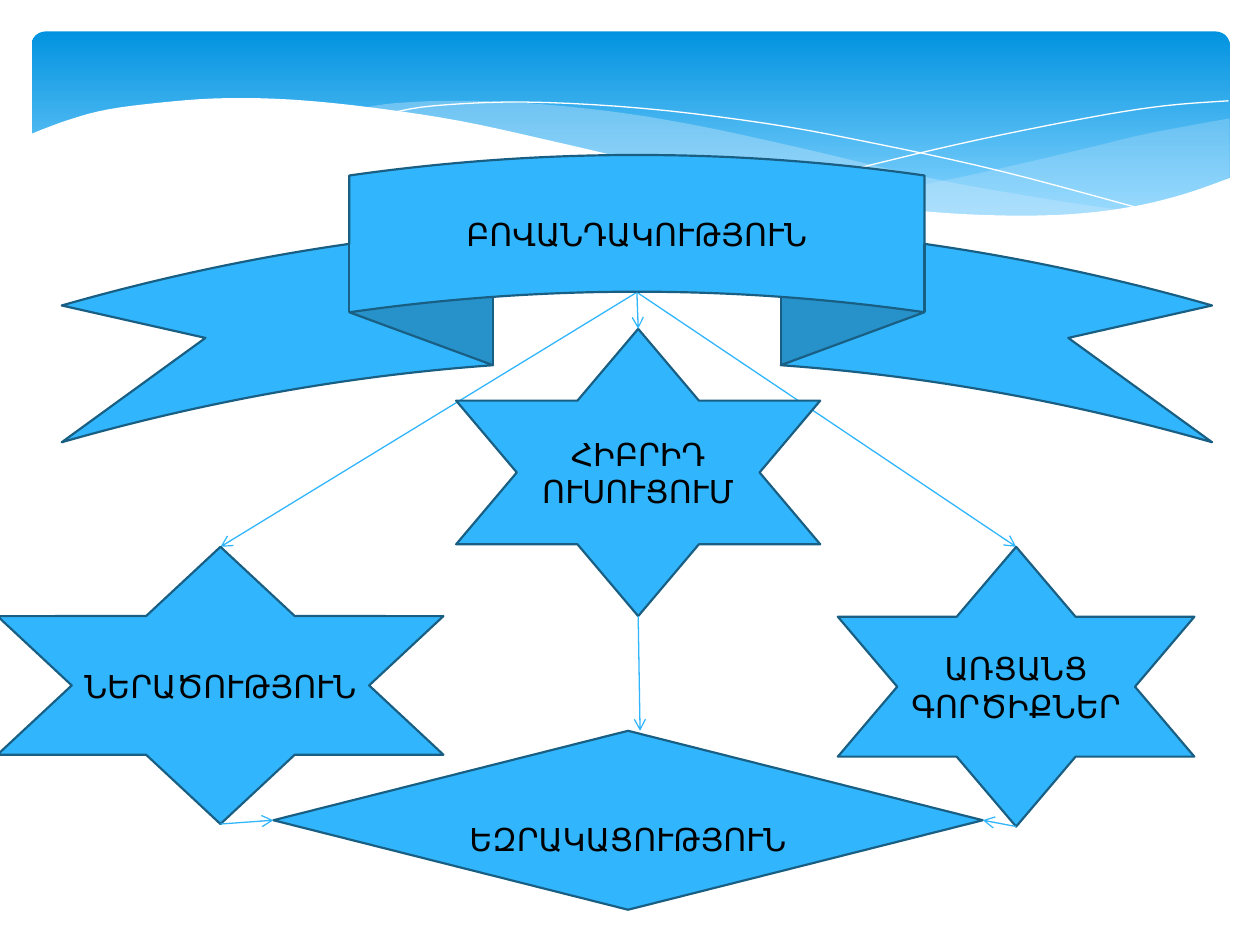
import pptx
import pptx.util
import pptx.dml.color
import pptx.enum.shapes
import pptx.enum.text
import pptx.oxml
import pptx.oxml.ns

Inches, Pt = pptx.util.Inches, pptx.util.Pt
SHAPE = pptx.enum.shapes.MSO_SHAPE
WIDTH, HEIGHT = 10, 7.5
BLUE, OUTLINE, PALE, WHITE, BLACK = "31B6FD", "195F84", "C6E7FC", "FFFFFF", "000000"

# Content: name -> preset, (left, top, width, height), adjustments, top inset, lines
PARTS = {
    "intro": (SHAPE.STAR_6_POINT, (-0.02, 4.34, 3.54, 2.2), (), 0.05, ["ՆԵՐԱԾՈՒԹՅՈՒՆ"]),
    "contents": (SHAPE.CURVED_UP_RIBBON, (0.49, 1.23, 9.13, 2.28), (0.524, 0.5, 0.125), 0.05,
                 ["ԲՈՎԱՆԴԱԿՈՒԹՅՈՒՆ"]),
    "tools": (SHAPE.STAR_6_POINT, (6.65, 4.34, 2.83, 2.22), (), 0.05, ["ԱՌՑԱՆՑ ԳՈՐԾԻՔՆԵՐ"]),
    "hybrid": (SHAPE.STAR_6_POINT, (3.62, 2.61, 2.89, 2.28), (), 0.05, ["ՀԻԲՐԻԴ", "ՈՒՍՈՒՑՈՒՄ"]),
    "conclusion": (SHAPE.FLOWCHART_DECISION, (2.17, 5.8, 5.63, 1.42), (), 0.35,
                   ["ԵԶՐԱԿԱՑՈՒԹՅՈՒՆ"]),
}

# Header waves: smooth edges given by knots, joined by straight lines
RIGHT_WAVE = [
    [(9.76, 0.94), (9.48, 0.99), (9.06, 1.07), (8.61, 1.18), (7.79, 1.37), (7.06, 1.52), (6.61, 1.6)],
    [(6.61, 1.6), (7.05, 1.65), (7.57, 1.7), (8.14, 1.72), (8.63, 1.7), (9.05, 1.63), (9.42, 1.54),
     (9.76, 1.41)],
]
MIDDLE_WAVE = [
    [(8.93, 1.67), (8.37, 1.59), (7.41, 1.42), (6.29, 1.16), (5.55, 1), (4.89, 0.89), (4.2, 0.82),
     (3.61, 0.8), (3.13, 0.82), (2.86, 0.86)],
    [(2.86, 0.86), (3.42, 0.94), (4.04, 1.06), (4.91, 1.26), (5.66, 1.43), (6.34, 1.56), (6.95, 1.65),
     (7.48, 1.7), (8.07, 1.73), (8.57, 1.71), (8.93, 1.67)],
]
LONG_STRAND = [[(3.09, 0.9), (3.44, 0.84), (4.16, 0.81), (5.1, 0.86), (6.08, 0.98), (6.95, 1.14),
                (7.95, 1.36), (9.07, 1.66)]]
SHORT_STRAND = [[(6.13, 1.51), (6.95, 1.3), (7.76, 1.11), (8.66, 0.93), (9.24, 0.84), (9.75, 0.8)]]
WHITE_WAVE = [
    [(9.77, 1.41), (9.4, 1.54), (8.99, 1.64), (8.5, 1.7), (7.93, 1.71), (7.26, 1.67), (6.48, 1.56),
     (5.55, 1.39), (4.47, 1.14), (3.65, 0.96), (2.92, 0.85), (2.3, 0.79), (1.77, 0.78), (1.32, 0.81),
     (0.85, 0.87), (0.52, 0.96), (0.23, 1.07)],
    [(0.23, 2.24), (9.77, 2.24)],
]
# Edges, fill colour (None for a white strand), opacity in percent
WAVES = [(RIGHT_WAVE, PALE, 29), (MIDDLE_WAVE, PALE, 40), (LONG_STRAND, None, 100),
         (SHORT_STRAND, None, 100), (WHITE_WAVE, WHITE, 100)]


def rgb(value):
    return pptx.dml.color.RGBColor.from_string(value)


def smooth(knots, steps=5):
    """Points of a Catmull-Rom curve through the knots."""
    padded = [knots[0], *knots, knots[-1]]
    points = [knots[0]]
    for a, b, c, d in zip(padded, padded[1:], padded[2:], padded[3:]):
        for step in range(1, steps + 1):
            t = step / steps
            points.append(tuple(
                (2 * q + (r - p) * t + (2 * p - 5 * q + 4 * r - s) * t ** 2
                 + (3 * q - p - 3 * r + s) * t ** 3) / 2
                for p, q, r, s in zip(a, b, c, d)))
    return points


def add_wave(page, edges, color, opacity):
    points = [(Inches(x), Inches(y)) for edge in edges for x, y in smooth(edge)]
    builder = page.shapes.build_freeform(*points[0])
    builder.add_line_segments(points[1:], close=color is not None)
    wave = builder.convert_to_shape()
    wave.shadow.inherit = False
    if color is None:
        wave.fill.background()
        wave.line.color.rgb = rgb(WHITE)
        wave.line.width = 0
        return
    wave.fill.solid()
    wave.fill.fore_color.rgb = rgb(color)
    wave.line.fill.background()
    if opacity < 100:
        tint = wave.fill._xPr.find(".//" + pptx.oxml.ns.qn("a:srgbClr"))
        alpha = pptx.oxml.ns.qn("a:alpha")
        tint.makeelement(alpha, {})
        tint.append(tint.makeelement(alpha, {"val": str(opacity * 1000)}))


def add_header(page):
    band = page.shapes.add_shape(SHAPE.ROUNDED_RECTANGLE,
                                 *map(Inches, (0.25, 0.25, WIDTH - 0.49, 1.56)))
    band.adjustments[0] = 0.071
    band.shadow.inherit = False
    band.line.fill.background()
    band.fill.gradient()
    band.fill.gradient_angle = 270
    for stop, (position, color) in zip(band.fill.gradient_stops, [(0, "0293E0"), (0.9, "83D3FE")]):
        stop.position = position
        stop.color.rgb = rgb(color)
    for wave in WAVES:
        add_wave(page, *wave)


def add_part(page, preset, place, adjustments, top_inset, lines):
    box = page.shapes.add_shape(preset, *map(Inches, place))
    for index, value in enumerate(adjustments):
        box.adjustments[index] = value
    box.shadow.inherit = False
    box.fill.solid()
    box.fill.fore_color.rgb = rgb(BLUE)
    box.line.color.rgb = rgb(OUTLINE)
    box.line.width = Pt(1.25)
    frame = box.text_frame
    frame.word_wrap = True
    frame.margin_top = Inches(top_inset)
    frame.vertical_anchor = pptx.enum.text.MSO_ANCHOR.MIDDLE
    for index, line in enumerate(lines):
        para = frame.add_paragraph() if index else frame.paragraphs[0]
        para.alignment = pptx.enum.text.PP_ALIGN.CENTER
        span = para.add_run()
        span.text = line
        for name, value in {"size": Pt(18), "name": "Calibri"}.items():
            setattr(span.font, name, value)
        span.font.color.rgb = rgb(BLACK)
    return box


def add_arrow(page, start, end):
    arrow = page.shapes.add_connector(pptx.enum.shapes.MSO_CONNECTOR.STRAIGHT,
                                      *map(Inches, (*start, *end)))
    arrow.line.color.rgb = rgb(BLUE)
    arrow.line.width = Pt(0.75)
    namespace = pptx.oxml.ns.nsdecls("a")
    arrow.line._get_or_add_ln().append(
        pptx.oxml.parse_xml(f'<a:tailEnd {namespace} type="arrow"/>'))
    arrow._element.spPr.append(pptx.oxml.parse_xml(f"<a:effectLst {namespace}/>"))
    return arrow


def middle(name, share):
    """Point on the vertical axis of a part, at a share of its height."""
    left, top, width, height = PARTS[name][1]
    return left + width / 2, top + height * share


def main():
    deck = pptx.Presentation()
    deck.slide_width, deck.slide_height = Inches(WIDTH), Inches(HEIGHT)
    page = deck.slides.add_slide(deck.slide_layouts[6])
    add_header(page)

    # Long arrows lie behind the parts
    ribbon_foot = (middle("contents", 0)[0], 2.32)
    for name in ("tools", "intro"):
        add_arrow(page, ribbon_foot, middle(name, 0))
    boxes = {name: add_part(page, *part) for name, part in PARTS.items()}

    # Short arrows lie in front
    add_arrow(page, ribbon_foot, middle("hybrid", 0))
    add_arrow(page, middle("hybrid", 1), (5.08, PARTS["conclusion"][1][1]))
    for name, side in (("intro", 1), ("tools", 3)):
        arrow = add_arrow(page, middle(name, 1), middle("conclusion", 0.5))
        arrow.end_connect(boxes["conclusion"], side)
    deck.save("out.pptx")


if __name__ == "__main__":
    main()
